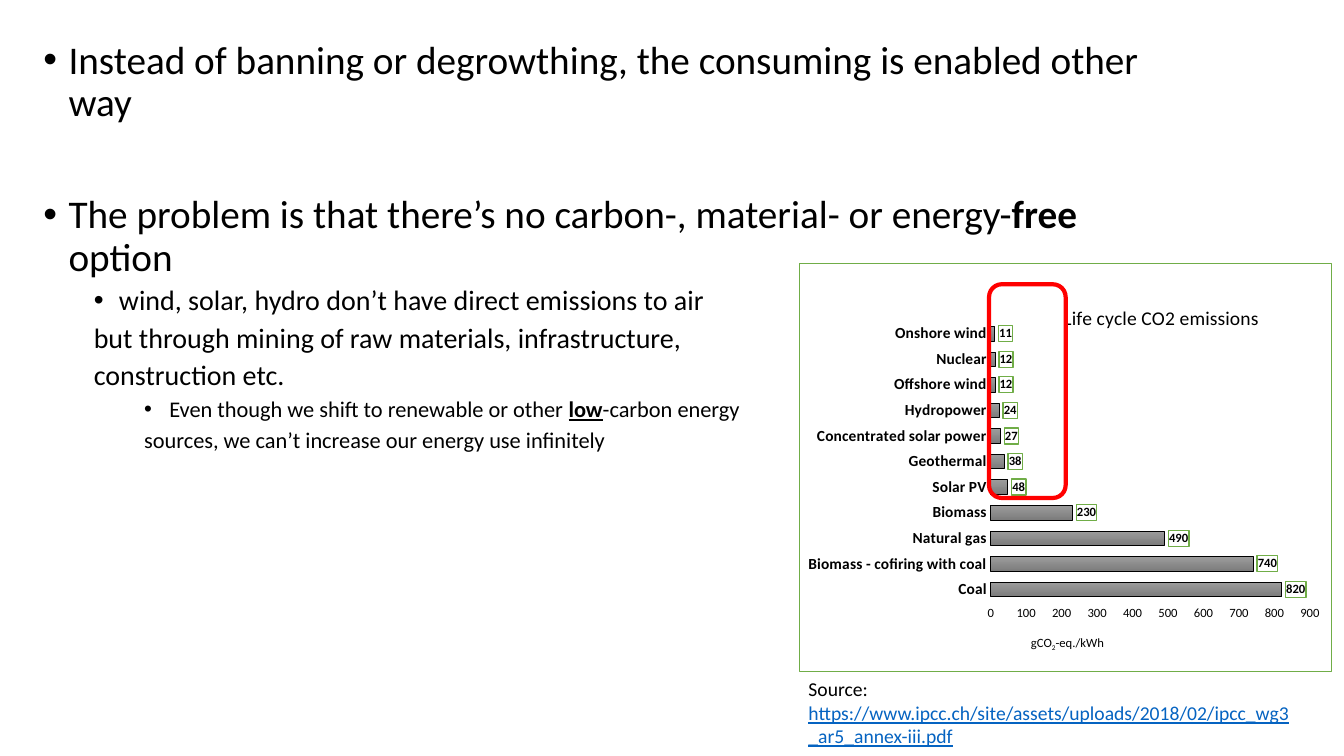
"""Build a slide on the limits of low-carbon energy with a life cycle emissions chart."""
from lxml import etree
from pptx import Presentation
from pptx.chart.data import CategoryChartData
from pptx.dml.color import RGBColor
from pptx.enum.chart import XL_CHART_TYPE, XL_LABEL_POSITION, XL_TICK_MARK
from pptx.enum.shapes import MSO_SHAPE
from pptx.enum.text import MSO_ANCHOR, MSO_AUTO_SIZE
from pptx.oxml import parse_xml
from pptx.oxml.ns import qn
from pptx.util import Inches, Pt

BAR_CLUSTERED = XL_CHART_TYPE.BAR_CLUSTERED
OUTSIDE_END = XL_LABEL_POSITION.OUTSIDE_END
NO_TICK = XL_TICK_MARK.NONE
ROUNDED_RECTANGLE = MSO_SHAPE.ROUNDED_RECTANGLE
TOP = MSO_ANCHOR.TOP
NO_AUTOFIT = MSO_AUTO_SIZE.NONE

BLACK = RGBColor(0x00, 0x00, 0x00)
WHITE = RGBColor(0xFF, 0xFF, 0xFF)
RED = RGBColor(0xFF, 0x00, 0x00)
GREEN = RGBColor(0x70, 0xAD, 0x47)
LINK_BLUE = RGBColor(0x05, 0x63, 0xC1)
BAR_LIGHT = RGBColor(0x9D, 0x9D, 0x9D)
BAR_DARK = RGBColor(0x7C, 0x7C, 0x7C)
FONT = "Calibri"


def add_run(paragraph, text, size, color=BLACK, bold=False, underline=False):
    run = paragraph.add_run()
    run.text = text
    run.font.name = FONT
    run.font.size = Pt(size)
    run.font.color.rgb = color
    run.font.bold = bold
    run.font.underline = underline
    return run


def place(element, index, **fractions):
    for old_layout in element.findall(qn("c:layout")):
        element.remove(old_layout)
    layout = etree.Element(qn("c:layout"))
    manual = etree.SubElement(layout, qn("c:manualLayout"))
    if "w" in fractions:
        etree.SubElement(manual, qn("c:layoutTarget"), val="inner")
    for axis in "xy":
        etree.SubElement(manual, qn(f"c:{axis}Mode"), val="edge")
    for name, value in fractions.items():
        etree.SubElement(manual, qn(f"c:{name}"), val=str(value))
    element.insert(index, layout)


presentation = Presentation()
presentation.slide_width = Inches(13.33)
presentation.slide_height = Inches(7.5)
slide = presentation.slides.add_slide(presentation.slide_layouts[1])
title = slide.shapes.title
title.element.getparent().remove(title.element)

body = slide.placeholders[1]
body.left, body.top = Inches(0.33), Inches(0.35)
body.width, body.height = Inches(11.5), Inches(7.15)
body.fill.solid()
body.fill.fore_color.rgb = WHITE
body_frame = body.text_frame
body_frame.word_wrap = True
body_frame.auto_size = NO_AUTOFIT
body_frame.vertical_anchor = TOP

SIZES = [28, 20, 16]
BODY_TEXT = [
    (0, True, 0, [("Instead of banning or degrowthing, the consuming is enabled other way", "")]),
    (0, True, 50, [("The problem is that there’s no carbon-, material- or energy-", ""),
                   ("free ", "b"), ("option", "")]),
    (1, True, 5, [("wind, solar, hydro don’t have direct emissions to air", "")]),
    (1, False, 5, [("but through mining of raw materials, infrastructure,", "")]),
    (1, False, 5, [("construction etc.", "")]),
    (2, True, 5, [("Even though we shift to renewable or other ", ""), ("low", "bu"),
                  ("-carbon energy", "")]),
    (2, False, 5, [("sources, we can’t increase our energy use infinitely", "")]),
]
for number, (level, bulleted, space_before, runs) in enumerate(BODY_TEXT):
    paragraph = body_frame.add_paragraph() if number else body_frame.paragraphs[0]
    paragraph.level = level
    properties = paragraph._p.get_or_add_pPr()
    margin = 0.5 * level + (0.25 if bulleted else 0)
    properties.set("marL", str(Inches(margin)))
    properties.set("indent", str(Inches(-0.25 if bulleted else 0)))
    if bulleted:
        etree.SubElement(properties, qn("a:buFont"), typeface="Arial")
        etree.SubElement(properties, qn("a:buChar"), char="•")
    else:
        etree.SubElement(properties, qn("a:buNone"))
    paragraph.line_spacing = 0.9
    paragraph.space_before = Pt(space_before)
    for text, style in runs:
        add_run(paragraph, text, SIZES[level], bold="b" in style, underline="u" in style)

EMISSIONS = {
    "Coal": 820, "Biomass - cofiring with coal": 740, "Natural gas": 490, "Biomass": 230,
    "Solar PV": 48, "Geothermal": 38, "Concentrated solar power": 27, "Hydropower": 24,
    "Offshore wind": 12, "Nuclear": 12, "Onshore wind": 11,
}
chart_data = CategoryChartData()
chart_data.categories = list(EMISSIONS)
chart_data.add_series("Series 1", list(EMISSIONS.values()))
chart = slide.shapes.add_chart(BAR_CLUSTERED, Inches(7.92), Inches(2.61), Inches(5.29),
                               Inches(4.06), chart_data).chart
chart.has_legend = False
chart.font.name = FONT
chart.font.size = Pt(10)
chart.font.color.rgb = BLACK

chart.has_title = True
add_run(chart.chart_title.text_frame.paragraphs[0], "Life cycle CO2 emissions", 14)
title_element = chart.chart_title._element
place(title_element, 1, x=0.49, y=0.09)
title_element.find(qn("c:overlay")).set("val", "1")
plot_area = chart._chartSpace.chart.plotArea
place(plot_area, 0, x=0.36, y=0.14, w=0.6, h=0.69)

plot = chart.plots[0]
plot.gap_width = 75
plot.vary_by_categories = False
bars = plot.series[0].format
bars.fill.gradient()
bars.fill.gradient_angle = 270
for stop, color in zip(bars.fill.gradient_stops, (BAR_LIGHT, BAR_DARK)):
    stop.color.rgb = color
bars.line.color.rgb = BLACK
bars.line.width = Pt(0.5)

plot.has_data_labels = True
labels = plot.data_labels
labels.show_value = True
labels.position = OUTSIDE_END

category_axis, value_axis = chart.category_axis, chart.value_axis
for item, size, bold in ((labels, 9, True), (category_axis.tick_labels, 11, True),
                         (value_axis.tick_labels, 9, False)):
    item.font.name = FONT
    item.font.size = Pt(size)
    item.font.bold = bold
    item.font.color.rgb = BLACK
for axis in (category_axis, value_axis):
    axis.has_major_gridlines = False
    axis.major_tick_mark = NO_TICK
    axis.minor_tick_mark = NO_TICK
    axis.format.line.fill.background()
value_axis.minimum_scale = 0
value_axis.maximum_scale = 900
value_axis.major_unit = 100
value_axis.has_title = True
unit_paragraph = value_axis.axis_title.text_frame.paragraphs[0]
add_run(unit_paragraph, "gCO", 9)
subscript = add_run(unit_paragraph, "2", 9)
subscript.font._element.set("baseline", "-25000")
add_run(unit_paragraph, "-eq./kWh", 9)
place(value_axis.axis_title._element, 1, x=0.43, y=0.9)

for framed in (chart._chartSpace, labels._element):
    framed.find(qn("c:txPr")).addprevious(parse_xml(
        '<c:spPr xmlns:c="http://schemas.openxmlformats.org/drawingml/2006/chart"'
        ' xmlns:a="http://schemas.openxmlformats.org/drawingml/2006/main">'
        f'<a:solidFill><a:srgbClr val="{WHITE}"/></a:solidFill><a:ln w="{Pt(1)}">'
        f'<a:solidFill><a:srgbClr val="{GREEN}"/></a:solidFill></a:ln></c:spPr>'))

highlight = slide.shapes.add_shape(ROUNDED_RECTANGLE, Inches(9.81), Inches(2.82),
                                   Inches(0.76), Inches(2.12))
highlight.shadow.inherit = False
highlight.fill.background()
highlight.line.color.rgb = RED
highlight.line.width = Pt(3)

source = slide.shapes.add_textbox(Inches(7.92), Inches(6.67), Inches(5.04), Inches(0.81))
source.text_frame.word_wrap = True
source_paragraph = source.text_frame.paragraphs[0]
add_run(source_paragraph, "Source: ", 14)
add_run(source_paragraph,
        "https://www.ipcc.ch/site/assets/uploads/2018/02/ipcc_wg3_ar5_annex-iii.pdf",
        14, LINK_BLUE, underline=True)

presentation.save("out.pptx")
